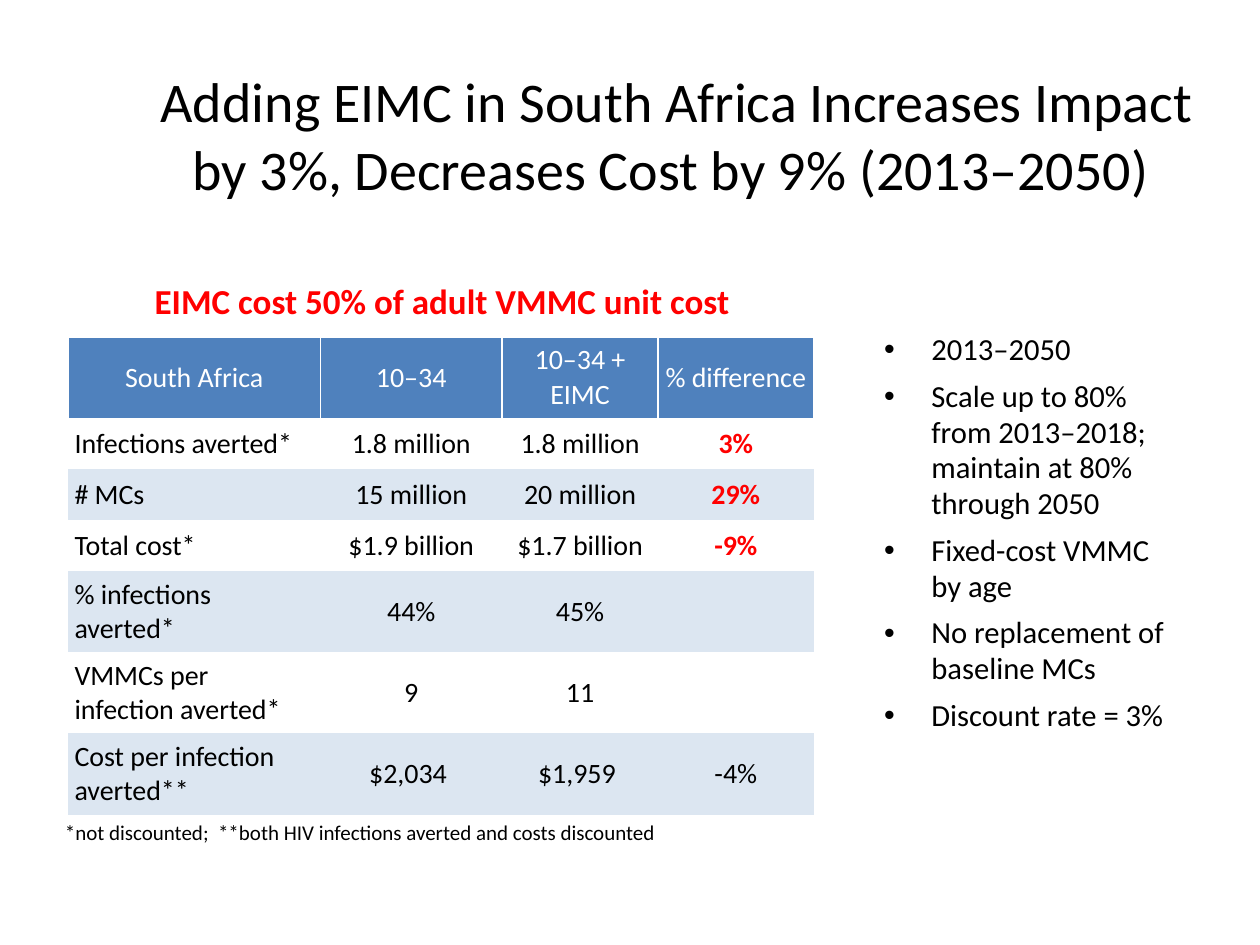
from lxml.etree import SubElement
from pptx import Presentation
from pptx.dml.color import RGBColor
from pptx.enum.text import MSO_ANCHOR, MSO_AUTO_SIZE, PP_ALIGN
from pptx.oxml import parse_xml
from pptx.oxml.ns import nsdecls, qn
from pptx.util import Pt

FACE = "Calibri"
BLACK, WHITE, RED = "000000", "FFFFFF", "FF0000"
BLUE, PALE = "4F81BD", "DCE6F1"
PLAIN_STYLE = "{2D5ABB26-0587-4C30-8999-92F81FD0307C}"  # no style, no grid

TITLE = ("Adding EIMC in South Africa Increases Impact by 3%, "
         "Decreases Cost by 9% (2013–2050) ")
POINTS = [
    "2013–2050",
    "Scale up to 80% from 2013–2018; maintain at 80% through 2050",
    "Fixed-cost VMMC \nby age",
    "No replacement of baseline MCs",
    "Discount rate = 3%",
]
WIDTHS = [144, 104, 89, 89]
ROWS = [
    ["South Africa", "10–34", "10–34 + EIMC", "% difference"],
    ["Infections averted*", "1.8 million", "1.8 million", "3%"],
    ["# MCs", "15 million", "20 million", "29%"],
    ["Total cost*", "$1.9 billion", "$1.7 billion", "-9%"],
    ["% infections averted*", "44%", "45%", ""],
    ["VMMCs per infection averted*", "9", "11", ""],
    ["Cost per infection averted**", "$2,034 ", "$1,959 ", "-4%"],
]


def paint(hue):
    return RGBColor.from_string(hue)


def write(para, text, size, hue=BLACK, bold=False, align=None):
    """Add text to a paragraph, one run for each line."""
    para.alignment = align
    for i, line in enumerate(text.split("\n")):
        if i:
            para.add_line_break()
        run = para.add_run()
        run.text = line
        font = run.font
        font.name, font.size, font.bold = FACE, Pt(size), bold
        font.color.rgb = paint(hue)


def place(shape, left, top, width, height):
    shape.left, shape.top = Pt(left), Pt(top)
    shape.width, shape.height = Pt(width), Pt(height)


def add_title(slide):
    title = slide.shapes.title
    place(title, 84, 21.6, 606, 110)
    frame = title.text_frame
    frame.auto_size = MSO_AUTO_SIZE.NONE
    frame.vertical_anchor = MSO_ANCHOR.MIDDLE
    write(frame.paragraphs[0], TITLE, 32, align=PP_ALIGN.CENTER)


def add_list(slide):
    body = slide.placeholders[1]
    place(body, 498, 186, 186, 276)
    frame = body.text_frame
    frame.auto_size = MSO_AUTO_SIZE.NONE
    for i, point in enumerate(POINTS):
        para = frame.add_paragraph() if i else frame.paragraphs[0]
        props = para._p.get_or_add_pPr()
        props.set("marL", str(Pt(27)))
        props.set("indent", str(Pt(-27)))
        mark = SubElement(props, qn("a:buChar"))
        mark.set("char", "•")
        para.space_before = Pt(6 if i else 0)
        para.line_spacing = 0.98
        write(para, point, 17.5)


def add_label(slide, box, text, size, **look):
    label = slide.shapes.add_textbox(*map(Pt, box))
    label.text_frame.word_wrap = True
    write(label.text_frame.paragraphs[0], text, size, **look)


def edge(cell):
    """Draw white lines on the left, right and top of a cell."""
    props = cell._tc.get_or_add_tcPr()
    for i, side in enumerate(("lnL", "lnR", "lnT")):
        props.insert(i, parse_xml(
            f'<a:{side} {nsdecls("a")} w="{Pt(1)}"><a:solidFill>'
            f'<a:srgbClr val="{WHITE}"/></a:solidFill></a:{side}>'))


def fill_cell(cell, text, row, col):
    cell.vertical_anchor = MSO_ANCHOR.MIDDLE
    cell.margin_left = cell.margin_right = Pt(3.6)
    cell.margin_top = cell.margin_bottom = Pt(3.6)
    head = row == 0
    if head or row % 2 == 0:
        cell.fill.solid()
        cell.fill.fore_color.rgb = paint(BLUE if head else PALE)
    else:
        cell.fill.background()
    if head:
        edge(cell)
    if text:
        key = col == 3 and 1 <= row <= 3
        hue = WHITE if head else RED if key else BLACK
        align = PP_ALIGN.CENTER if head or col else PP_ALIGN.LEFT
        write(cell.text_frame.paragraphs[0], text, 16, hue, key, align)


def add_grid(slide):
    high = 29.2
    frame = slide.shapes.add_table(
        len(ROWS), len(WIDTHS), Pt(39), Pt(192.5),
        Pt(sum(WIDTHS)), Pt(high * len(ROWS)))
    table = frame.table
    table.horz_banding = False
    table._tbl.tblPr.find(qn("a:tableStyleId")).text = PLAIN_STYLE
    for col, width in zip(table.columns, WIDTHS):
        col.width = Pt(width)
    for r, row in enumerate(ROWS):
        table.rows[r].height = Pt(high)
        for c, text in enumerate(row):
            fill_cell(table.cell(r, c), text, r, c)


def main():
    deck = Presentation()
    deck.slide_width, deck.slide_height = Pt(720), Pt(540)
    slide = deck.slides.add_slide(deck.slide_layouts[1])
    add_title(slide)
    add_list(slide)
    add_grid(slide)
    add_label(slide, (30, 465, 450, 24),
              "*not discounted;  **both HIV infections averted "
              "and costs discounted", 12)
    add_label(slide, (42, 156, 426, 31.5),
              "EIMC cost 50% of adult VMMC unit cost ", 20,
              hue=RED, bold=True, align=PP_ALIGN.CENTER)
    deck.save("out.pptx")


if __name__ == "__main__":
    main()
